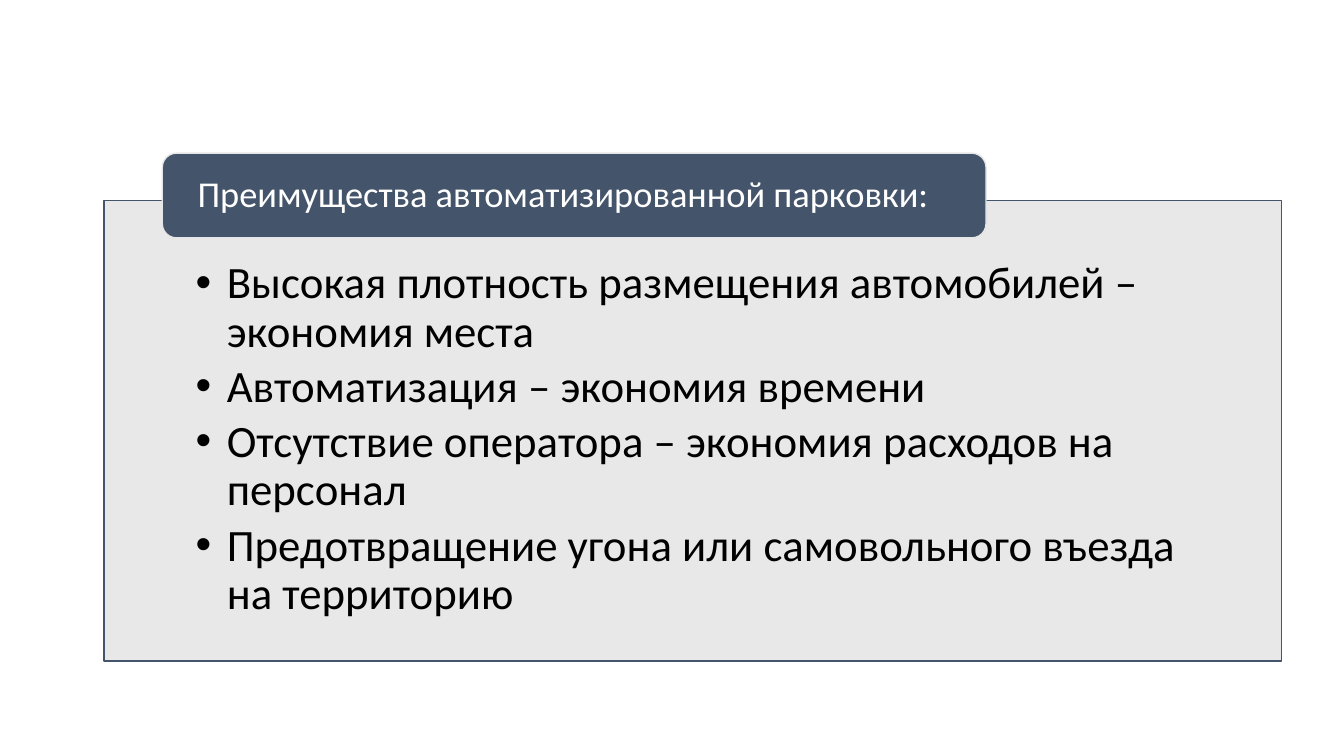
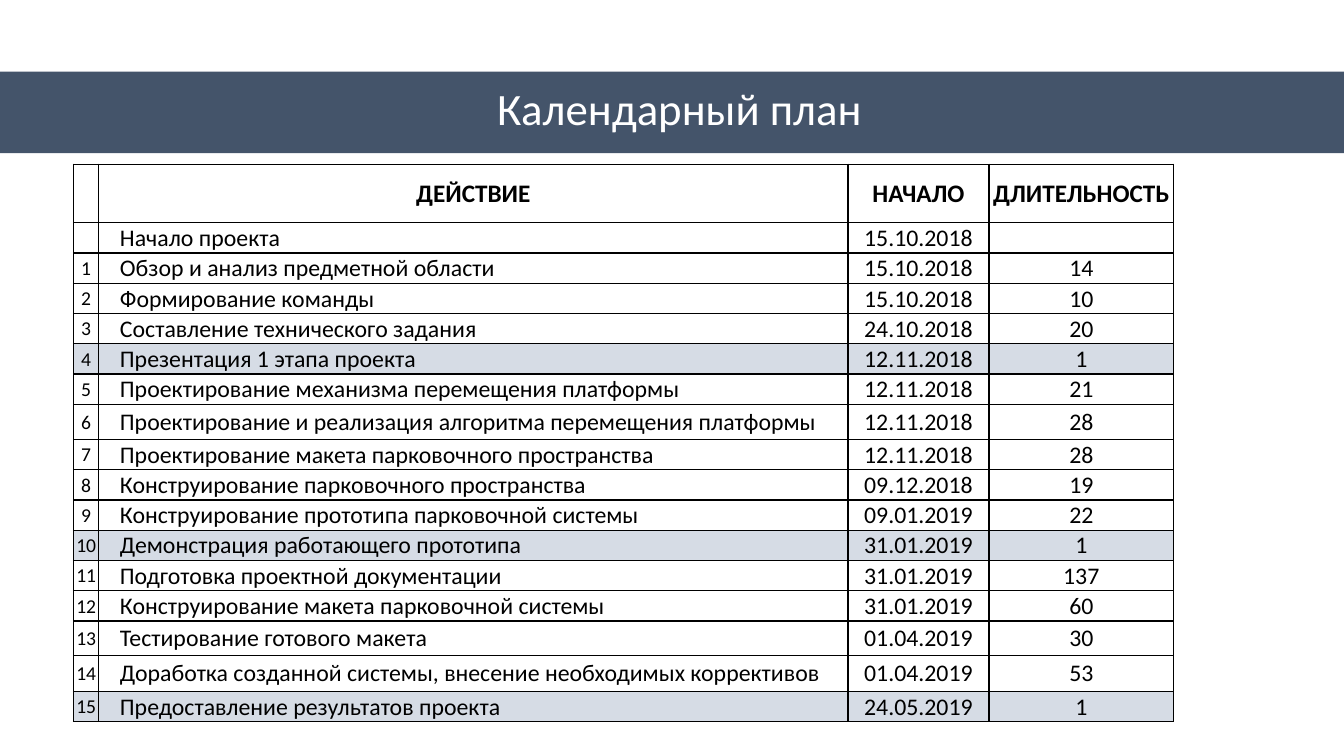
from lxml import etree
from pptx import Presentation
from pptx.dml.color import RGBColor
from pptx.enum import shapes, text
from pptx.oxml.ns import qn
from pptx.util import Inches, Pt

NAVY, GREY, TINT, WHITE, BLACK = "44546A", "E7E6E6", "D6DCE5", "FFFFFF", "000000"
FONT = "Calibri"
LEFT, CENTER = text.PP_ALIGN.LEFT, text.PP_ALIGN.CENTER
MIDDLE, TOP = text.MSO_ANCHOR.MIDDLE, text.MSO_ANCHOR.TOP
RECT, ROUNDED = shapes.MSO_SHAPE.RECTANGLE, shapes.MSO_SHAPE.ROUNDED_RECTANGLE

ADVANTAGES_TITLE = "Преимущества автоматизированной парковки:"
ADVANTAGES = [
    "Высокая плотность размещения автомобилей – экономия места",
    "Автоматизация – экономия времени",
    "Отсутствие оператора – экономия расходов на персонал",
    "Предотвращение угона или самовольного въезда на территорию",
]
PLAN_TITLE = "Календарный план"
PLAN_HEAD = ("", "ДЕЙСТВИЕ", "НАЧАЛО", "ДЛИТЕЛЬНОСТЬ")
PLAN_START = ("", "Начало проекта", "15.10.2018", "")
STAGES = [
    ("Обзор и анализ предметной области", "15.10.2018", 14),
    ("Формирование команды", "15.10.2018", 10),
    ("Составление технического задания", "24.10.2018", 20),
    ("Презентация 1 этапа проекта", "12.11.2018", 1),
    ("Проектирование механизма перемещения платформы", "12.11.2018", 21),
    ("Проектирование и реализация алгоритма перемещения платформы", "12.11.2018", 28),
    ("Проектирование макета парковочного пространства", "12.11.2018", 28),
    ("Конструирование парковочного пространства", "09.12.2018", 19),
    ("Конструирование прототипа парковочной системы", "09.01.2019", 22),
    ("Демонстрация работающего прототипа", "31.01.2019", 1),
    ("Подготовка проектной документации", "31.01.2019", 137),
    ("Конструирование макета парковочной системы", "31.01.2019", 60),
    ("Тестирование готового макета", "01.04.2019", 30),
    ("Доработка созданной системы, внесение необходимых коррективов", "01.04.2019", 53),
    ("Предоставление результатов проекта", "24.05.2019", 1),
]
COLUMN_WIDTHS = (0.25, 7.43, 1.4, 1.83)
ROW_HEIGHT = 0.3
SPECIAL_HEIGHTS = {0: 0.58, 7: 0.35, 14: 0.34, 15: 0.36}


def color(value):
    return RGBColor.from_string(value)


def apply(target, **values):
    for name, value in values.items():
        setattr(target, name, value)


def place(part, left, top, width, height):
    apply(part, left=Inches(left), top=Inches(top),
          width=Inches(width), height=Inches(height))


def margins(target, left, top, right, bottom):
    apply(target, margin_left=Inches(left), margin_top=Inches(top),
          margin_right=Inches(right), margin_bottom=Inches(bottom))


def indent(paragraph, left, first=0):
    properties = paragraph._p.get_or_add_pPr()
    properties.set("marL", str(Inches(left)))
    properties.set("indent", str(Inches(first)))


def write(paragraph, words, size, ink, align, bold=False):
    paragraph.alignment = align
    run = paragraph.add_run()
    run.text = words
    apply(run.font, name=FONT, size=Pt(size), bold=bold)
    run.font.color.rgb = color(ink)


def fill_placeholder(holder, box, lines, size, ink, align, anchor, insets):
    place(holder, *box)
    frame = holder.text_frame
    apply(frame, word_wrap=True, auto_size=text.MSO_AUTO_SIZE.NONE, vertical_anchor=anchor)
    margins(frame, *insets)
    for index, line in enumerate(lines):
        paragraph = frame.add_paragraph() if index else frame.paragraphs[0]
        apply(paragraph, line_spacing=0.9, space_before=Pt(0))
        write(paragraph, line, size, ink, align)
    return frame.paragraphs


def backdrop(slide, preset, box, fill, outline=None, opacity=None):
    block = slide.shapes.add_shape(preset, *map(Inches, box))
    block.shadow.inherit = False
    block.fill.solid()
    block.fill.fore_color.rgb = color(fill)
    if opacity:
        tone = block._element.spPr.find(qn("a:solidFill"))[0]
        etree.SubElement(tone, qn("a:alpha"), val=str(opacity * 1000))
    if outline:
        block.line.color.rgb = color(outline)
        block.line.width = Pt(1)
    else:
        block.line.fill.background()
    block._element.getparent().insert(2, block._element)


def border(cell):
    properties = cell._tc.get_or_add_tcPr()
    for side in ("lnL", "lnR", "lnT", "lnB"):
        edge = etree.SubElement(properties, qn(f"a:{side}"), w=str(Pt(1)))
        paint = etree.SubElement(edge, qn("a:solidFill"))
        etree.SubElement(paint, qn("a:srgbClr"), val=BLACK)


def advantages_slide(deck):
    slide = deck.slides.add_slide(deck.slide_layouts[1])
    panel = (1.03, 1.99, 11.68, 4.57)
    backdrop(slide, ROUNDED, (1.61, 1.52, 8.17, 0.84), NAVY, GREY)
    backdrop(slide, RECT, panel, GREY, NAVY, opacity=90)
    fill_placeholder(slide.shapes.title, (1.65, 1.56, 8.09, 0.76), [ADVANTAGES_TITLE],
                     26, WHITE, LEFT, MIDDLE, (0.31, 0, 0.31, 0))
    bullets = fill_placeholder(slide.placeholders[1], panel, ADVANTAGES,
                               32, BLACK, LEFT, TOP, (0.91, 0.59, 0.91, 0.25))
    for bullet in bullets:
        bullet.space_after = Pt(4.8)
        indent(bullet, 0.31, -0.31)


def plan_slide(deck):
    slide = deck.slides.add_slide(deck.slide_layouts[5])
    backdrop(slide, RECT, (0, 0.71, 13.33, 0.81), NAVY)
    fill_placeholder(slide.shapes.title, (0.61, 0.7, 12.26, 0.81), [PLAN_TITLE],
                     32, WHITE, CENTER, MIDDLE, (0.1, 0.05, 0.1, 0.05))
    rows = [PLAN_HEAD, PLAN_START]
    rows += [(str(number), action, start, str(days))
             for number, (action, start, days) in enumerate(STAGES, 1)]
    heights = [SPECIAL_HEIGHTS.get(index, ROW_HEIGHT) for index in range(len(rows))]
    plan = slide.shapes.add_table(
        len(rows), len(COLUMN_WIDTHS), Inches(0.73), Inches(1.63),
        Inches(sum(COLUMN_WIDTHS)), Inches(sum(heights))).table
    apply(plan, first_row=False, horz_banding=False)
    for column, width in zip(plan.columns, COLUMN_WIDTHS):
        column.width = Inches(width)
    for r, (row, height) in enumerate(zip(rows, heights)):
        plan.rows[r].height = Inches(height)
        milestone = row[3] == "1"
        for c, words in enumerate(row):
            cell = plan.cell(r, c)
            border(cell)
            margins(cell, 0.01, 0.01, 0.01, 0)
            cell.vertical_anchor = MIDDLE
            if milestone:
                cell.fill.solid()
                cell.fill.fore_color.rgb = color(TINT)
            else:
                cell.fill.background()
            action = r > 0 and c == 1
            paragraph = cell.text_frame.paragraphs[0]
            size = 14 if c == 0 else 17 if r else 18
            write(paragraph, words, size, BLACK, LEFT if action else CENTER, bold=r == 0)
            if action:
                indent(paragraph, 0.2)


def main():
    deck = Presentation()
    apply(deck, slide_width=Inches(13.33), slide_height=Inches(7.5))
    advantages_slide(deck)
    plan_slide(deck)
    deck.save("out.pptx")


if __name__ == "__main__":
    main()
